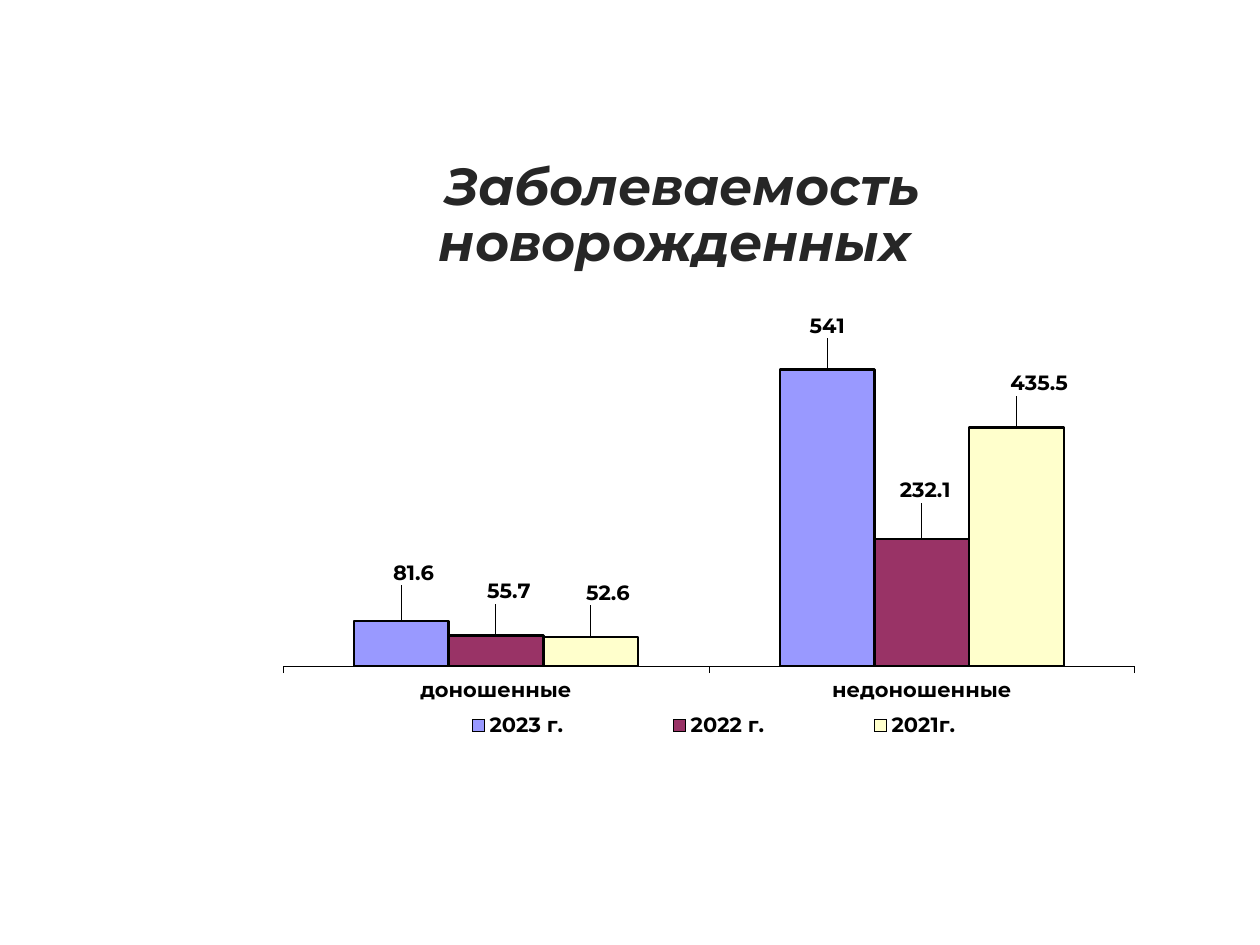
import pptx
import pptx.chart.data
import pptx.dml.color
import pptx.enum.chart
import pptx.enum.text
import pptx.oxml
import pptx.oxml.ns
import pptx.util

FACE = "Montserrat"
CATS = ["доношенные", "недоношенные"]
ROWS = [
    ("2023 г.", [81.6, 541], "9999FF", [(0.014, -0.07), (0, -0.06)]),
    ("2022 г.", [55.7, 232.1], "993366", [(0.015, -0.06), (0.004, -0.07)]),
    ("2021г.", [52.6, 435.5], "FFFFCC", [(0.02, -0.06), (0.026, -0.06)]),
]


def tint(code):
    """Turn a hex string into a colour."""
    return pptx.dml.color.RGBColor.from_string(code)


def style(font, size, code="000000"):
    """Set a bold face with its size and colour."""
    font.name = FACE
    font.size = pptx.util.Pt(size)
    font.bold = True
    font.color.rgb = tint(code)


def edge(line, width):
    """Draw a black line of the given width."""
    line.color.rgb = tint("000000")
    line.width = pptx.util.Pt(width)


def layout(**parts):
    """Make a manual chart layout from shares of the chart."""
    body = "".join(f'<c:{key} val="{val}"/>' for key, val in parts.items())
    space = pptx.oxml.ns.nsdecls("c")
    return pptx.oxml.parse_xml(
        f"<c:layout {space}><c:manualLayout>{body}</c:manualLayout></c:layout>")


def place(node, frame, after=None):
    """Put a layout in a chart part, in place of any old one."""
    for old in node.xpath("c:layout"):
        node.remove(old)
    spot = 0 if after is None else node.index(node.xpath(after)[0]) + 1
    node.insert(spot, frame)


def title(slide, wide, high):
    """Fill and place the slide title."""
    box = slide.shapes.title
    box.left, box.top = int(wide * 0.15), int(high * 0.193)
    box.width, box.height = int(wide * 0.783), int(high * 0.072)
    frame = box.text_frame
    frame.word_wrap = True
    frame.auto_size = pptx.enum.text.MSO_AUTO_SIZE.NONE
    frame.vertical_anchor = pptx.enum.text.MSO_ANCHOR.MIDDLE
    frame.margin_left = frame.margin_right = pptx.util.Inches(0.2)
    para = frame.paragraphs[0]
    para.alignment = pptx.enum.text.PP_ALIGN.CENTER
    para.line_spacing = 0.9
    run = para.add_run()
    run.text = "Заболеваемость новорожденных "
    style(run.font, 29.7, "262626")
    run.font.italic = True


def bars(series, code, shifts):
    """Colour one series and set its shifted labels."""
    series.format.fill.solid()
    series.format.fill.fore_color.rgb = tint(code)
    series.invert_if_negative = False
    edge(series.format.line, 1.4)
    tags = series.data_labels
    tags.show_value = True
    tags.position = pptx.enum.chart.XL_LABEL_POSITION.OUTSIDE_END
    style(tags.font, 12)
    for num, (x, y) in enumerate(shifts):
        tag = series.points[num].data_label
        tag.position = pptx.enum.chart.XL_LABEL_POSITION.OUTSIDE_END
        style(tag.font, 12)
        node = series._element.xpath(f"c:dLbls/c:dLbl[c:idx/@val='{num}']")[0]
        place(node, layout(x=x, y=y), "c:idx")


def axes(chart):
    """Show the category axis and hide the value axis."""
    cat, val = chart.category_axis, chart.value_axis
    cat.tick_label_position = pptx.enum.chart.XL_TICK_LABEL_POSITION.LOW
    cat.major_tick_mark = pptx.enum.chart.XL_TICK_MARK.OUTSIDE
    style(cat.tick_labels.font, 12)
    edge(cat.format.line, 0.35)
    val.minimum_scale, val.maximum_scale = 0, 604
    val.has_major_gridlines = False
    val.visible = False


def graph(slide, wide, high):
    """Add the column chart with its legend."""
    data = pptx.chart.data.CategoryChartData()
    data.categories = CATS
    for name, vals, _, _ in ROWS:
        data.add_series(name, vals)
    chart = slide.shapes.add_chart(
        pptx.enum.chart.XL_CHART_TYPE.COLUMN_CLUSTERED,
        int(wide * 0.217), int(high * 0.332),
        int(wide * 0.692), int(high * 0.473), data).chart
    chart.has_title = False
    style(chart.font, 11.2)
    chart.font.name = "Arial"
    plot = chart.plots[0]
    plot.gap_width, plot.overlap = 150, 0
    plot.vary_by_categories = False
    for series, (_, _, code, shifts) in zip(plot.series, ROWS):
        bars(series, code, shifts)
    axes(chart)
    chart.has_legend = True
    chart.legend.position = pptx.enum.chart.XL_LEGEND_POSITION.BOTTOM
    chart.legend.include_in_layout = False
    style(chart.legend.font, 12)
    root = chart._chartSpace
    place(root.xpath("c:chart/c:plotArea")[0], layout(
        layoutTarget="inner", xMode="edge", yMode="edge",
        x=0.011, y=0.035, w=0.977, h=0.75))
    place(root.xpath("c:chart/c:legend")[0], layout(
        xMode="edge", yMode="edge", x=0.11, y=0.88, w=0.79, h=0.08),
        "c:legendPos")


def main():
    """Build and save the slide."""
    deck = pptx.Presentation()
    wide = deck.slide_width = pptx.util.Inches(10)
    high = deck.slide_height = pptx.util.Inches(7.5)
    slide = deck.slides.add_slide(deck.slide_layouts[5])
    title(slide, wide, high)
    graph(slide, wide, high)
    deck.save("out.pptx")


if __name__ == "__main__":
    main()
